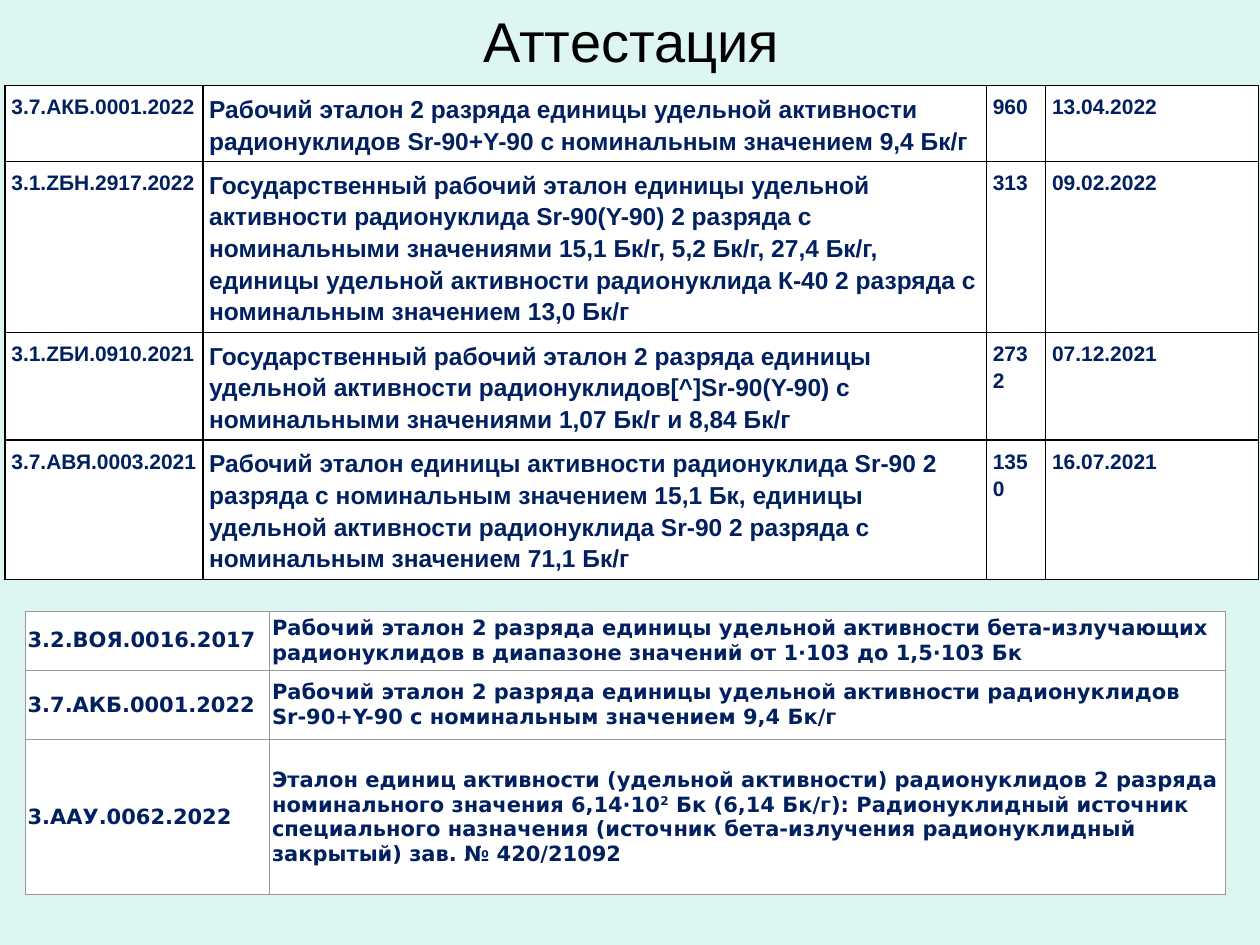
from dataclasses import dataclass

from lxml import etree
from pptx import Presentation
from pptx.dml.color import RGBColor
from pptx.enum.text import MSO_ANCHOR as Anchor, PP_ALIGN as Align
from pptx.oxml.ns import qn
from pptx.util import Inches, Pt


@dataclass(frozen=True)
class Theme:
    background: str = "DEF6F1"
    title: str = "000000"
    text: str = "002060"
    cell: str = "FFFFFF"
    dark_rule: str = "000000"
    light_rule: str = "999999"
    title_size: int = 32
    large: int = 14
    small: int = 12
    sans: str = "Arial"
    wide: str = "DejaVu Sans"


theme = Theme()


def write(frame, text, size, font=theme.sans, color=theme.text, bold=True,
          align=Align.LEFT, line=None, after=None):
    """Fill a text frame; pieces of text between bars are superscript."""
    frame.word_wrap = True
    para = frame.paragraphs[0]
    para.alignment = align
    if line:
        para.line_spacing = line
    if after is not None:
        para.space_after = Pt(after)
    for index, piece in enumerate(text.split("|")):
        span = para.add_run()
        span.text = piece
        span.font.name = font
        span.font.size = Pt(size)
        span.font.bold = bold
        span.font.color.rgb = RGBColor.from_string(color)
        if index % 2:
            span._r.get_or_add_rPr().set("baseline", "30000")


def add_grid(page, left, top, widths, heights, rows, sizes, rule, rule_width,
             margins, anchor, **text_format):
    """Add a table with a plain fill and the same rule around every cell."""
    frame = page.shapes.add_table(
        len(rows), len(widths), Inches(left), Inches(top),
        Inches(sum(widths)), Inches(sum(heights)))
    table = frame.table
    table.first_row = table.horz_banding = False
    for column, width in zip(table.columns, widths):
        column.width = Inches(width)
    for row, height, texts in zip(table.rows, heights, rows):
        row.height = Inches(height)
        for cell, text, size in zip(row.cells, texts, sizes):
            side, edge = margins
            cell.margin_left = cell.margin_right = Inches(side)
            cell.margin_top = cell.margin_bottom = Inches(edge)
            cell.vertical_anchor = anchor
            write(cell.text_frame, text, size, **text_format)
            properties = cell._tc.get_or_add_tcPr()
            for name in ("a:lnL", "a:lnR", "a:lnT", "a:lnB"):
                border = etree.SubElement(properties, qn(name), w=str(Pt(rule_width)))
                fill = etree.SubElement(border, qn("a:solidFill"))
                etree.SubElement(fill, qn("a:srgbClr"), val=rule)
            cell.fill.solid()
            cell.fill.fore_color.rgb = RGBColor.from_string(theme.cell)


deck = Presentation()
deck.slide_width, deck.slide_height = Inches(10), Inches(7.5)
page = deck.slides.add_slide(deck.slide_layouts.get_by_name("Title Only"))
page.background.fill.solid()
page.background.fill.fore_color.rgb = RGBColor.from_string(theme.background)

title = page.shapes.title
title.left, title.top = Inches(0.51), Inches(0.05)
title.width, title.height = Inches(9), Inches(0.54)
title.text_frame.vertical_anchor = Anchor.MIDDLE
write(title.text_frame, "Аттестация", theme.title_size, color=theme.title,
      bold=False, align=Align.CENTER)

certified = [
    ("3.7.АКБ.0001.2022",
     "Рабочий эталон 2 разряда единицы удельной активности радионуклидов "
     "Sr-90+Y-90 с номинальным значением 9,4 Бк/г",
     "960", "13.04.2022"),
    ("3.1.ZБН.2917.2022",
     "Государственный рабочий эталон единицы удельной активности радионуклида "
     "Sr-90(Y-90) 2 разряда с номинальными значениями 15,1 Бк/г, 5,2 Бк/г, "
     "27,4 Бк/г, единицы удельной активности радионуклида К-40 2 разряда "
     "с номинальным значением 13,0 Бк/г",
     "313", "09.02.2022"),
    ("3.1.ZБИ.0910.2021",
     "Государственный рабочий эталон 2 разряда единицы удельной активности "
     "радионуклидов[^]Sr-90(Y-90) с номинальными значениями 1,07 Бк/г и 8,84 Бк/г",
     "2732", "07.12.2021"),
    ("3.7.АВЯ.0003.2021",
     "Рабочий эталон единицы активности радионуклида Sr-90 2 разряда "
     "с номинальным значением 15,1 Бк, единицы удельной активности "
     "радионуклида Sr-90 2 разряда с номинальным значением 71,1 Бк/г",
     "1350", "16.07.2021"),
]
add_grid(page, 0.04, 0.68, [1.57, 6.22, 0.47, 1.69], [0.45, 0.63, 0.45, 0.63],
         certified, [theme.small, theme.large, theme.small, theme.small],
         theme.dark_rule, 1, (0.05, 0.05), Anchor.TOP, line=1.15, after=15)

standards = [
    ("3.2.ВОЯ.0016.2017",
     "Рабочий эталон 2 разряда единицы удельной активности бета-излучающих "
     "радионуклидов в диапазоне значений от 1·103 до 1,5·103 Бк"),
    ("3.7.АКБ.0001.2022",
     "Рабочий эталон 2 разряда единицы удельной активности радионуклидов "
     "Sr-90+Y-90 с номинальным значением 9,4 Бк/г"),
    ("3.ААУ.0062.2022",
     "Эталон единиц активности (удельной активности) радионуклидов 2 разряда "
     "номинального значения 6,14·10|2| Бк (6,14 Бк/г): Радионуклидный источник "
     "специального назначения (источник бета-излучения радионуклидный закрытый) "
     "зав. № 420/21092"),
]
add_grid(page, 0.2, 4.85, [1.94, 7.59], [0.47, 0.55, 1.23],
         standards, [theme.small, theme.small],
         theme.light_rule, 0.6, (0.02, 0.01), Anchor.MIDDLE, font=theme.wide)

deck.save("out.pptx")
